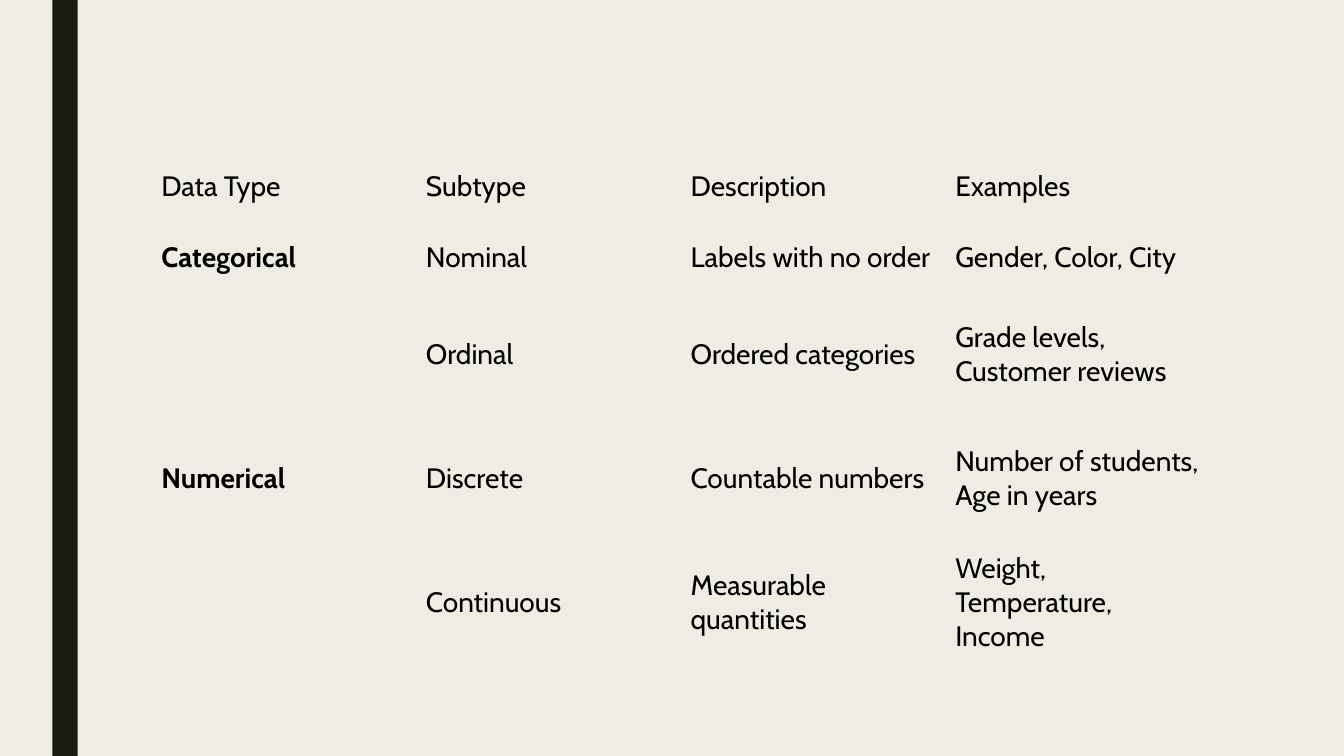
import pptx
import pptx.dml.color
import pptx.enum.shapes
import pptx.enum.text
import pptx.oxml.ns
import pptx.util

Inches = pptx.util.Inches
RGBColor = pptx.dml.color.RGBColor

BACKGROUND = RGBColor(0xEF, 0xED, 0xE3)
SIDE_BAR = RGBColor(0x19, 0x1B, 0x0E)
TEXT = RGBColor(0x00, 0x00, 0x00)

NO_GRID_STYLE = "{2D5ABB26-0587-4C30-8999-92F81FD0307C}"
FONT_FORMAT = {"name": "Cabin", "size": pptx.util.Pt(20)}
TABLE_FORMAT = {"first_row": False, "horz_banding": False}

ROW_HEIGHTS = [0.7, 0.7, 1.23, 1.23, 1.23]
DATA_TYPES = [
    ["Data Type", "Subtype", "Description", "Examples"],
    ["Categorical", "Nominal", "Labels with no order", "Gender, Color, City"],
    ["", "Ordinal", "Ordered categories", "Grade levels, Customer reviews"],
    ["Numerical", "Discrete", "Countable numbers", "Number of students, Age in years"],
    ["", "Continuous", "Measurable quantities", "Weight, Temperature, Income"],
]


def apply_format(target, values):
    for name, value in values.items():
        setattr(target, name, value)


def add_side_bar(slide):
    shape = slide.shapes.add_shape(
        pptx.enum.shapes.MSO_SHAPE.RECTANGLE,
        Inches(0.52), Inches(0), Inches(0.25), Inches(7.5),
    )
    shape.shadow.inherit = False
    shape.fill.solid()
    shape.fill.fore_color.rgb = SIDE_BAR
    shape.line.fill.background()


def fill_cell(cell, text, bold):
    cell.fill.background()
    cell.vertical_anchor = pptx.enum.text.MSO_ANCHOR.MIDDLE
    if text:
        run = cell.text_frame.paragraphs[0].add_run()
        run.text = text
        apply_format(run.font, FONT_FORMAT | {"bold": bold})
        run.font.color.rgb = TEXT


def add_data_type_table(slide):
    frame = slide.shapes.add_table(
        len(DATA_TYPES), len(DATA_TYPES[0]),
        Inches(1.5), Inches(1.5), Inches(10.5), Inches(sum(ROW_HEIGHTS)),
    )
    table = frame.table
    apply_format(table, TABLE_FORMAT)
    style_tag = pptx.oxml.ns.qn("a:tableStyleId")
    next(frame.element.iter(style_tag)).text = NO_GRID_STYLE
    for row, height in zip(table.rows, ROW_HEIGHTS):
        row.height = Inches(height)
    for row_index, texts in enumerate(DATA_TYPES):
        for column_index, text in enumerate(texts):
            bold = row_index > 0 and column_index == 0
            fill_cell(table.cell(row_index, column_index), text, bold)


def main():
    presentation = pptx.Presentation()
    presentation.slide_width = Inches(13.33)
    presentation.slide_height = Inches(7.5)
    slide = presentation.slides.add_slide(presentation.slide_layouts[6])
    slide.background.fill.solid()
    slide.background.fill.fore_color.rgb = BACKGROUND
    add_side_bar(slide)
    add_data_type_table(slide)
    presentation.save("out.pptx")


if __name__ == "__main__":
    main()
